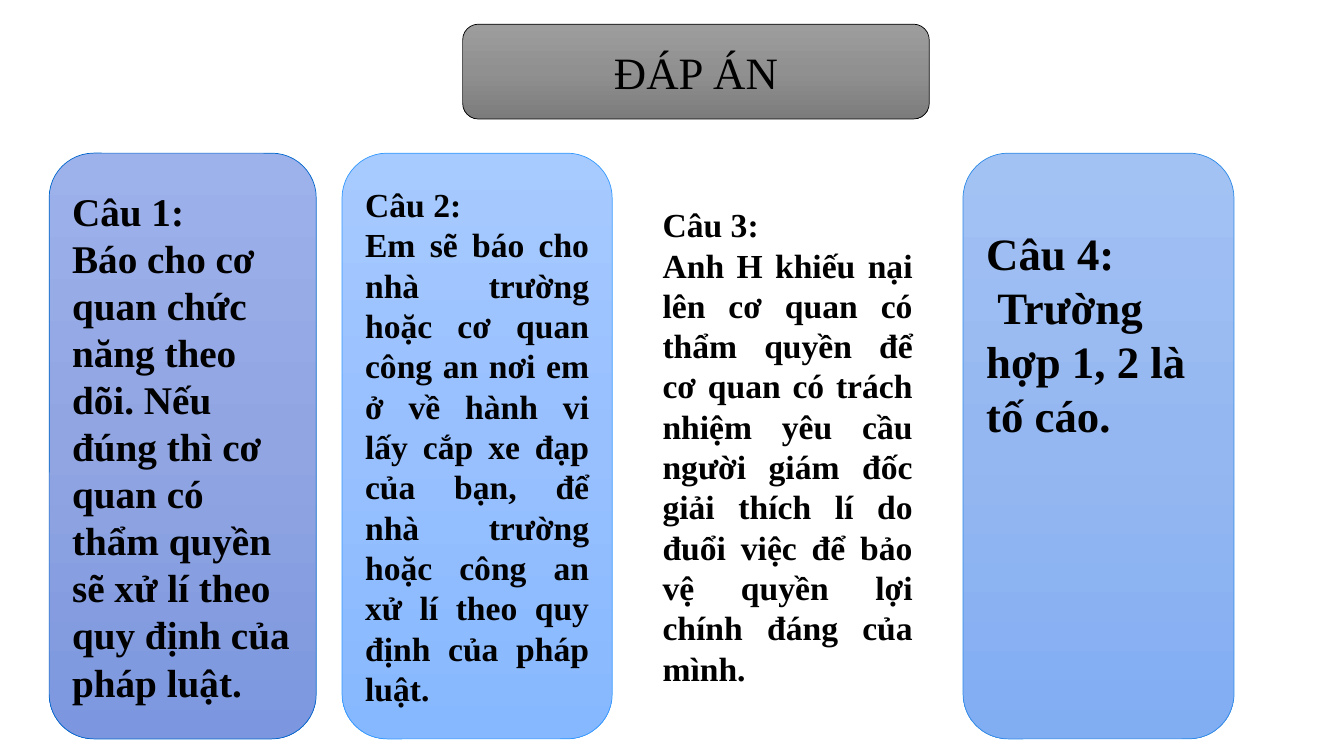
from copy import deepcopy
from dataclasses import dataclass

from pptx import Presentation
from pptx.dml.color import RGBColor
from pptx.enum.shapes import MSO_SHAPE as Shape
from pptx.enum.text import MSO_ANCHOR as Anchor, PP_ALIGN as Align
from pptx.oxml.ns import qn
from pptx.util import Cm, Pt


@dataclass(frozen=True)
class Theme:
    font: str = "Times New Roman"
    ink: str = "000000"
    outline: float = 0.5
    title_size: int = 32
    title_fill: tuple = ("9D9D9D", "909090", "7C7C7C")
    title_line: str = "000000"
    answer_sizes: tuple = (28, 24, 24, 32)
    answer_fills: tuple = (
        ("9DB1EB", "90A5E2", "7C97DF"),
        ("A7CAFF", "98C0FF", "86B8FF"),
        ("FFFFFF",),
        ("A3C2F4", "95B7F1", "81ADF3"),
    )
    answer_lines: tuple = ("0066CC", "3399FF", "FFFFFF", "2D8AE7")


THEME = Theme()

ANSWERS = (
    ("Câu 1:", "Báo cho cơ quan chức năng theo dõi. Nếu đúng thì cơ quan có "
     "thẩm quyền sẽ xử lí theo quy định của pháp luật."),
    ("Câu 2:", "Em sẽ báo cho nhà trường hoặc cơ quan công an nơi em ở về "
     "hành vi lấy cắp xe đạp của bạn, để nhà trường hoặc công an xử lí theo "
     "quy định của pháp luật."),
    ("Câu 3:", "Anh H khiếu nại lên cơ quan có thẩm quyền để cơ quan có trách "
     "nhiệm yêu cầu người giám đốc giải thích lí do đuổi việc để bảo vệ "
     "quyền lợi chính đáng của mình."),
    ("Câu 4:", "Trường hợp 1, 2 là tố cáo."),
)
ANSWER_WIDTHS = (6.73, 6.81, 7.54, 6.83)
ANSWER_ALIGNS = (Align.LEFT, Align.JUSTIFY, Align.JUSTIFY, Align.LEFT)
ANSWER_GAP = 0.65


def paint(fill, colours, properties):
    if len(colours) == 1:
        fill.solid()
        fill.fore_color.rgb = RGBColor.from_string(colours[0])
        return
    fill.gradient()
    fill.gradient_angle = 270
    stop_list = properties.find(qn("a:gradFill")).find(qn("a:gsLst"))
    stop_list.append(deepcopy(stop_list[-1]))
    for index, (stop, colour) in enumerate(zip(fill.gradient_stops, colours)):
        stop.position = index / (len(colours) - 1)
        stop.color.rgb = RGBColor.from_string(colour)


def add_card(slide, box, colours, line):
    card = slide.shapes.add_shape(Shape.ROUNDED_RECTANGLE, *map(Cm, box))
    card.shadow.inherit = False
    paint(card.fill, colours, card.element.spPr)
    card.line.color.rgb = RGBColor.from_string(line)
    card.line.width = Pt(THEME.outline)
    card.text_frame.word_wrap = True
    card.text_frame.vertical_anchor = Anchor.MIDDLE
    return card.text_frame


def write(paragraph, text, size, align, bold):
    paragraph.alignment = align
    run = paragraph.add_run()
    run.text = text
    run.font.name = THEME.font
    run.font.size = Pt(size)
    run.font.bold = bold
    run.font.color.rgb = RGBColor.from_string(THEME.ink)


def add_title(slide, box):
    frame = add_card(slide, box, THEME.title_fill, THEME.title_line)
    write(frame.paragraphs[0], "ĐÁP ÁN", THEME.title_size, Align.CENTER, False)


def add_answers(slide, left, top, height):
    columns = zip(ANSWERS, ANSWER_WIDTHS, ANSWER_ALIGNS, THEME.answer_sizes,
                  THEME.answer_fills, THEME.answer_lines)
    for (question, answer), width, align, size, colours, line in columns:
        frame = add_card(slide, (left, top, width, height), colours, line)
        write(frame.paragraphs[0], question, size, align, True)
        write(frame.add_paragraph(), answer, size, align, True)
        left += width + ANSWER_GAP
    frame.vertical_anchor = Anchor.TOP
    frame.margin_top = Cm(1.5)
    frame.paragraphs[1]._p.get_or_add_pPr().set("indent", str(Cm(0.28)))


def main():
    deck = Presentation()
    deck.slide_width, deck.slide_height = Cm(33.87), Cm(19.05)
    slide = deck.slides.add_slide(deck.slide_layouts[6])
    add_title(slide, (11.66, 0.61, 11.76, 2.39))
    add_answers(slide, left=1.24, top=3.86, height=14.76)
    deck.save("out.pptx")


if __name__ == "__main__":
    main()
